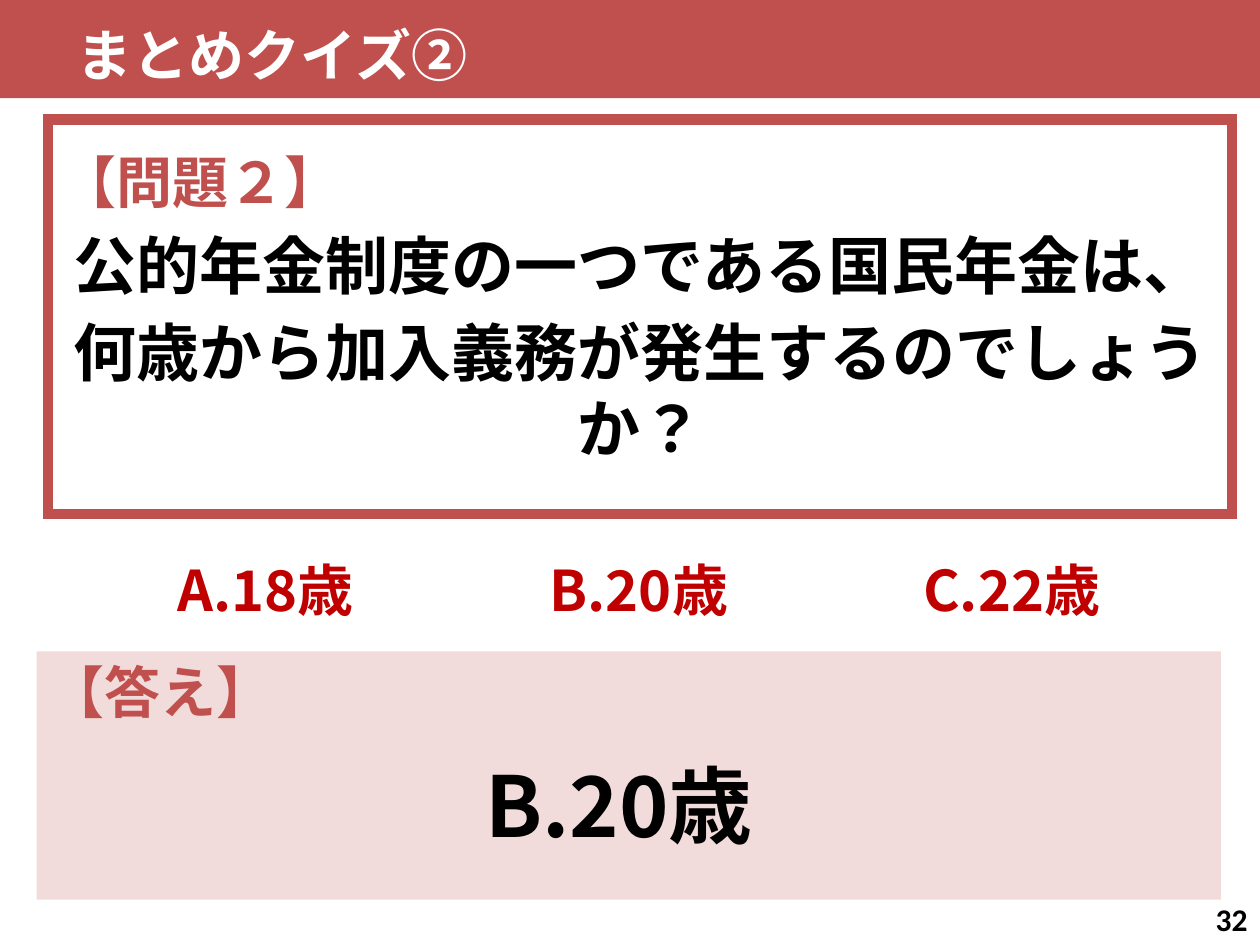
from pptx import Presentation
from pptx.dml.color import RGBColor
from pptx.enum.lang import MSO_LANGUAGE_ID
from pptx.enum.shapes import MSO_SHAPE
from pptx.enum.text import MSO_ANCHOR, PP_ALIGN
from pptx.oxml.ns import qn
from pptx.util import Inches, Pt
from lxml import etree

RECTANGLE = MSO_SHAPE.RECTANGLE
TOP, MIDDLE = MSO_ANCHOR.TOP, MSO_ANCHOR.MIDDLE
LEFT, CENTER, RIGHT = PP_ALIGN.LEFT, PP_ALIGN.CENTER, PP_ALIGN.RIGHT
JAPANESE = MSO_LANGUAGE_ID.JAPANESE

JAPANESE_FONT = "Noto Sans CJK JP"
NUMBER_FONT = "Calibri"
COLORS = {
    "red": "C0504D",
    "pink": "F2DCDB",
    "option": "C00000",
    "white": "FFFFFF",
    "black": "000000",
}


def rgb(name):
    return RGBColor.from_string(COLORS[name])


def add_panel(slide, box, fill, line=None):
    """Add a rectangle, with a sharp 6 pt outline when a line colour is given."""
    panel = slide.shapes.add_shape(RECTANGLE, *map(Inches, box))
    panel.shadow.inherit = False
    panel.fill.solid()
    panel.fill.fore_color.rgb = rgb(fill)
    if line:
        panel.line.color.rgb = rgb(line)
        panel.line.width = Pt(6)
        outline = panel._element.spPr.find(qn("a:ln"))
        etree.SubElement(outline, qn("a:miter"), lim="800000")
    else:
        panel.line.fill.background()
    return panel


def write_text(shape, lines, anchor=TOP, top_margin=0.05, font_name=JAPANESE_FONT):
    """Fill a shape with lines of (text, size, colour, alignment, space before)."""
    frame = shape.text_frame
    frame.word_wrap = True
    frame.vertical_anchor = anchor
    frame.margin_top = Inches(top_margin)
    for index, (text, size, color, alignment, space_before) in enumerate(lines):
        paragraph = frame.add_paragraph() if index else frame.paragraphs[0]
        paragraph.text = text
        paragraph.alignment = alignment
        paragraph.space_before = Pt(space_before)
        font = paragraph.font
        font.size = Pt(size)
        font.bold = True
        font.color.rgb = rgb(color)
        font.name = font_name
        if font_name == JAPANESE_FONT:
            font.language_id = JAPANESE
            properties = paragraph._p.pPr.find(qn("a:defRPr"))
            etree.SubElement(properties, qn("a:ea"), typeface=font_name)


def add_label(slide, box, line, **options):
    label = slide.shapes.add_textbox(*map(Inches, box))
    write_text(label, [line], **options)


def add_title_bar(slide, box):
    left, top, width, height = box
    add_panel(slide, box, "red")
    add_label(slide, (left + 0.51, top + 0.04, 5.8, height),
              ("まとめクイズ②", 32, "white", LEFT, 0), anchor=MIDDLE)


def add_question(slide, box):
    panel = add_panel(slide, box, "white", line="red")
    write_text(panel, [
        ("【問題２】", 32, "red", LEFT, 0),
        ("公的年金制度の一つである国民年金は、", 36, "black", CENTER, 7),
        ("何歳から加入義務が発生するのでしょうか？", 36, "black", CENTER, 6.5),
    ], top_margin=0.22)


def add_options(slide, box, options):
    """Share the box out in equal columns, one for each option."""
    left, top, width, height = box
    column = width / len(options)
    for index, option in enumerate(options):
        add_label(slide, (left + index * column, top, column, height),
                  (option, 32, "option", CENTER, 0))


def add_answer(slide, box):
    panel = add_panel(slide, box, "pink")
    write_text(panel, [
        ("【答え】", 32, "red", LEFT, 0),
        ("B.20歳 ", 48, "black", CENTER, 16.5),
    ])


def add_slide_number(slide, box, number):
    add_label(slide, box, (str(number), 18, "black", RIGHT, 0),
              anchor=MIDDLE, font_name=NUMBER_FONT)


def main():
    presentation = Presentation()
    presentation.slide_width = Inches(10)
    presentation.slide_height = Inches(7.5)
    slide = presentation.slides.add_slide(presentation.slide_layouts[6])
    add_title_bar(slide, (0, 0, 10, 0.78))
    add_answer(slide, (0.29, 5.17, 9.4, 1.97))
    add_question(slide, (0.38, 0.95, 9.4, 3.13))
    add_options(slide, (0.63, 4.36, 8.88, 0.64), ["A.18歳", "B.20歳", "C.22歳"])
    add_slide_number(slide, (7.75, 7.09, 2.25, 0.4), 32)
    presentation.save("out.pptx")


if __name__ == "__main__":
    main()
